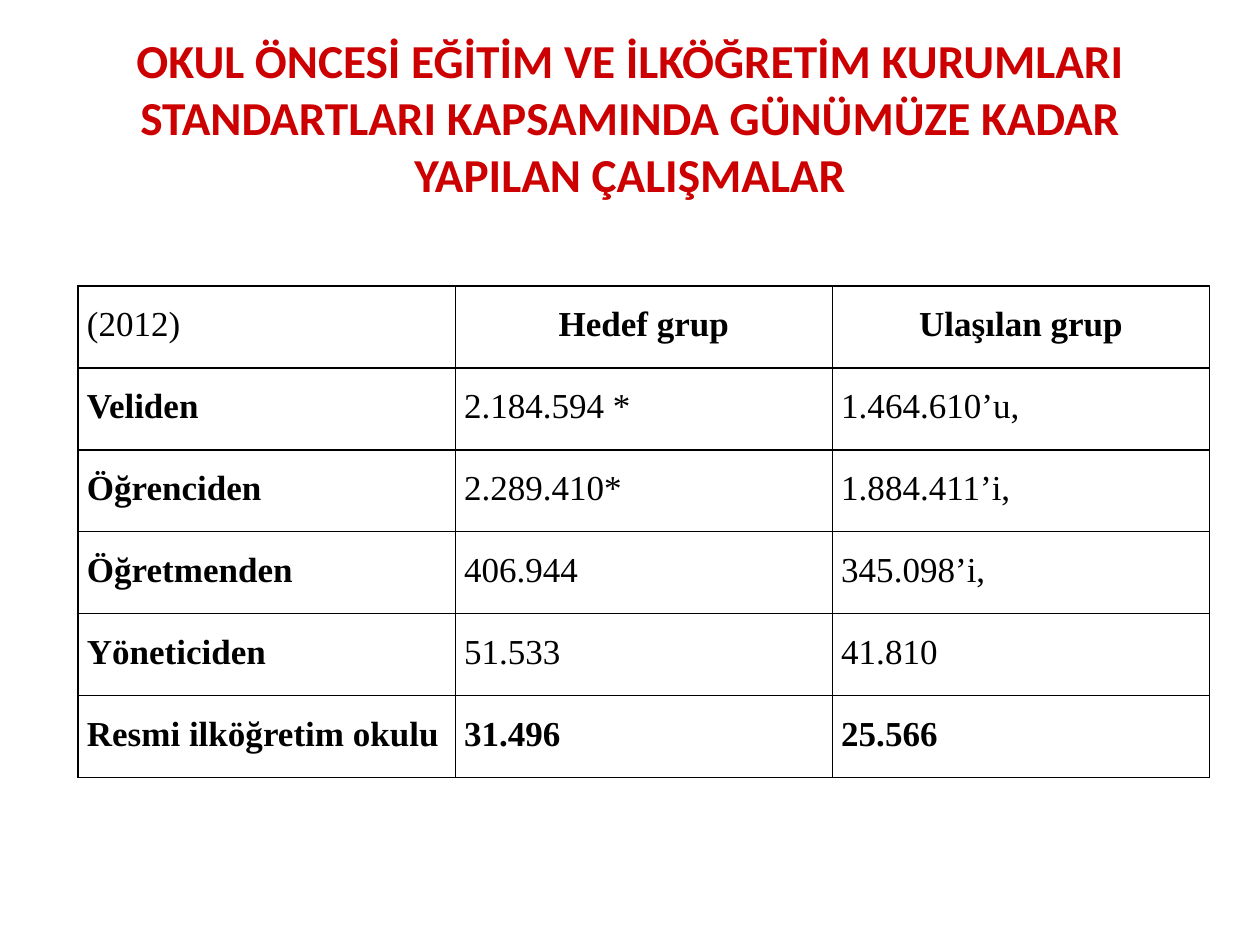
import pptx
import pptx.dml.color
import pptx.enum.text
import pptx.oxml
import pptx.oxml.ns
import pptx.util

Inches = pptx.util.Inches
Align = pptx.enum.text.PP_ALIGN
Anchor = pptx.enum.text.MSO_ANCHOR
COLORS = {"title": "CC0000", "text": "000000", "border": "000000"}


def write_text(text_frame, text, *, font, size, color, bold=False,
               align=Align.LEFT, line_spacing=None):
    paragraph = text_frame.paragraphs[0]
    paragraph.alignment = align
    paragraph.line_spacing = line_spacing
    run = paragraph.add_run()
    run.text = text
    run.font.name = font
    run.font.size = pptx.util.Pt(size)
    run.font.bold = bold
    run.font.color.rgb = pptx.dml.color.RGBColor.from_string(color)


def add_borders(cell, color, width):
    properties = cell._tc.get_or_add_tcPr()
    for position, side in enumerate(("lnL", "lnR", "lnT", "lnB")):
        properties.insert(position, pptx.oxml.parse_xml(
            f'<a:{side} {pptx.oxml.ns.nsdecls("a")} w="{pptx.util.Pt(width)}">'
            f'<a:solidFill><a:srgbClr val="{color}"/></a:solidFill></a:{side}>'))


presentation = pptx.Presentation()
presentation.slide_width = Inches(10)
presentation.slide_height = Inches(7.5)
slide = presentation.slides.add_slide(presentation.slide_layouts[6])

title = slide.shapes.add_textbox(Inches(0.5), Inches(0.3), Inches(9), Inches(1.25))
title.text_frame.word_wrap = True
title.text_frame.vertical_anchor = Anchor.MIDDLE
write_text(
    title.text_frame,
    "OKUL ÖNCESİ EĞİTİM VE İLKÖĞRETİM KURUMLARI STANDARTLARI "
    "KAPSAMINDA GÜNÜMÜZE KADAR YAPILAN ÇALIŞMALAR",
    font="Calibri", size=27, color=COLORS["title"], bold=True, align=Align.CENTER)

rows = [
    ("(2012)", "Hedef grup", "Ulaşılan grup"),
    ("Veliden", "2.184.594 *", "1.464.610’u,"),
    ("Öğrenciden", "2.289.410*", "1.884.411’i,"),
    ("Öğretmenden", "406.944", "345.098’i,"),
    ("Yöneticiden", "51.533", "41.810"),
    ("Resmi ilköğretim okulu", "31.496", "25.566"),
]
last_row = len(rows) - 1
table = slide.shapes.add_table(
    len(rows), 3, Inches(0.62), Inches(2.27), Inches(8.98), Inches(3.9)).table
table.first_row = False
table.horz_banding = False
for row in table.rows:
    row.height = Inches(0.65)

for row_index, row_texts in enumerate(rows):
    for column_index, text in enumerate(row_texts):
        is_heading = row_index == 0 and column_index > 0
        is_label = row_index > 0 and column_index == 0
        cell = table.cell(row_index, column_index)
        cell.fill.background()
        cell.margin_left = cell.margin_right = Inches(0.07)
        cell.margin_top = cell.margin_bottom = 0
        add_borders(cell, COLORS["border"], 1)
        write_text(
            cell.text_frame, text, font="Times New Roman", size=20,
            color=COLORS["text"], line_spacing=1.5,
            bold=is_heading or is_label or row_index == last_row,
            align=Align.CENTER if is_heading else Align.JUSTIFY)

presentation.save("out.pptx")
